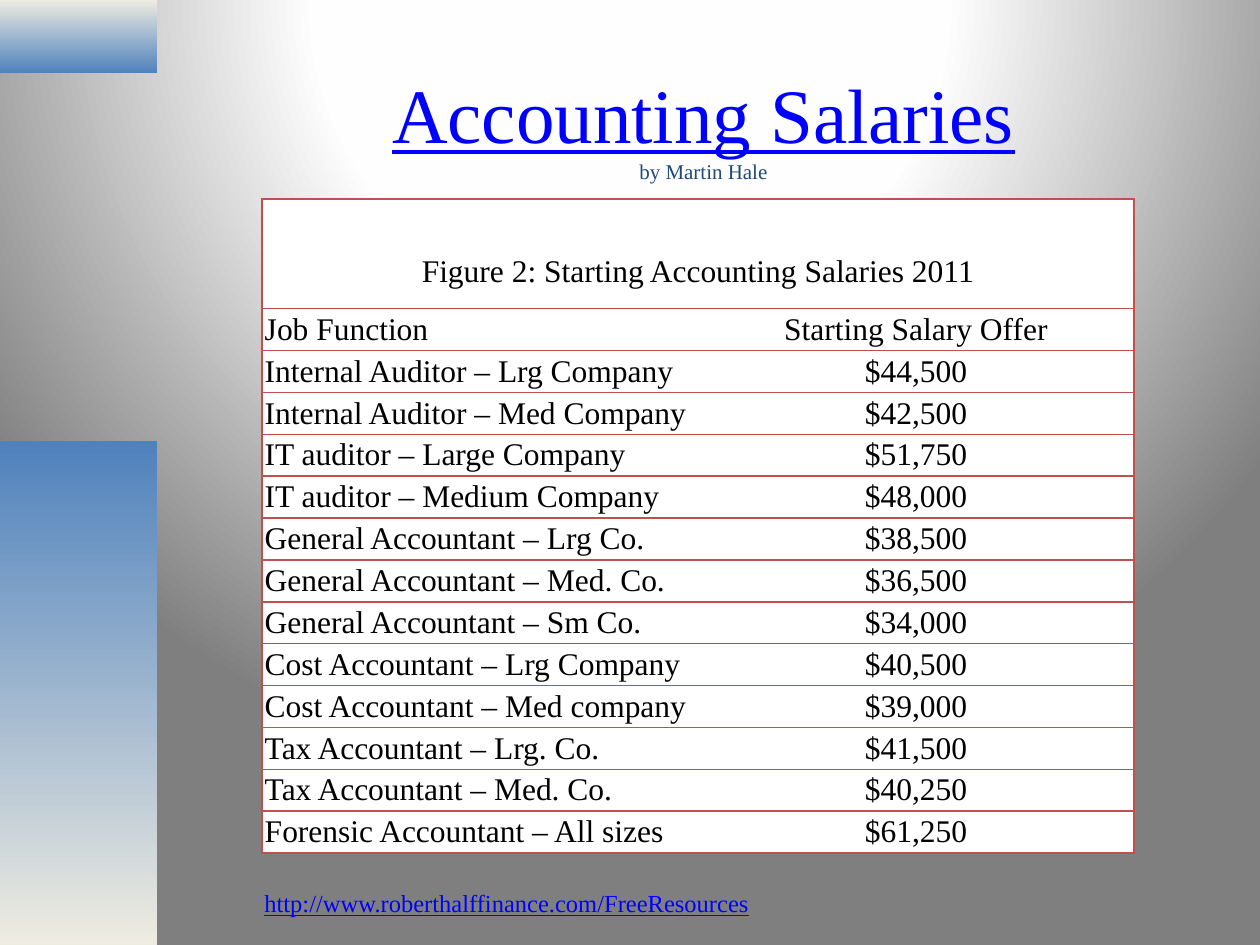
import pptx
import pptx.util
import pptx.oxml
import pptx.oxml.ns
from pptx.dml.color import RGBColor
from pptx.enum.shapes import MSO_SHAPE
from pptx.enum.text import MSO_ANCHOR, MSO_AUTO_SIZE, PP_ALIGN

Pt = pptx.util.Pt

# Content
TITLE = "Accounting Salaries"
BYLINE = "by Martin Hale"
HEAD = "Figure 2: Starting Accounting Salaries 2011"
LINK = "http://www.roberthalffinance.com/FreeResources"
ROWS = [
    ("Job Function", "Starting Salary Offer"),
    ("Internal Auditor – Lrg Company", "$44,500"),
    ("Internal Auditor – Med Company", "$42,500"),
    ("IT auditor – Large Company", "$51,750"),
    ("IT auditor – Medium Company", "$48,000"),
    ("General Accountant – Lrg Co.", "$38,500"),
    ("General Accountant – Med. Co.", "$36,500"),
    ("General Accountant – Sm Co.", "$34,000"),
    ("Cost Accountant – Lrg Company", "$40,500"),
    ("Cost Accountant – Med company", "$39,000"),
    ("Tax Accountant – Lrg. Co.", "$41,500"),
    ("Tax Accountant – Med. Co.", "$40,250"),
    ("Forensic Accountant – All sizes", "$61,250"),
]

# Style
FONT = "Times New Roman"
BLUE = RGBColor(0x00, 0x00, 0xFF)
NAVY = RGBColor(0x1F, 0x49, 0x7D)
STEEL = RGBColor(0x4F, 0x81, 0xBD)
CREAM = RGBColor(0xEE, 0xEC, 0xE1)
RED = RGBColor(0xC0, 0x50, 0x4D)
BLACK = RGBColor(0, 0, 0)
WHITE = RGBColor(0xFF, 0xFF, 0xFF)
PLAIN = "{2D5ABB26-0587-4C30-8999-92F81FD0307C}"  # table style without lines
NS = pptx.oxml.ns.nsdecls("a")

# Panels: top, height, upper colour, lower colour
PANELS = [(0, 42, CREAM, STEEL), (252, 288, STEEL, CREAM)]
SIDE_W = 90
COL_W, HEAD_H, ROW_H = 249.1, 62.6, 23.95
BACK = [(0, "FFFFFF"), (40, "FEFEFE"), (100, "7F7F7F")]


def style(font, size, color, line=False):
    font.name, font.size, font.underline = FONT, Pt(size), line
    font.color.rgb = color


def paint_back(slide):
    slide.background.fill.solid()
    old = slide.element.xpath(".//p:bgPr/a:solidFill")[0]
    stops = "".join(
        f'<a:gs pos="{pos * 1000}"><a:srgbClr val="{color}"/></a:gs>'
        for pos, color in BACK)
    new = pptx.oxml.parse_xml(
        f'<a:gradFill {NS} rotWithShape="1"><a:gsLst>{stops}</a:gsLst>'
        '<a:path path="circle"><a:fillToRect l="50000" t="-80000" '
        'r="50000" b="180000"/></a:path></a:gradFill>')
    old.getparent().replace(old, new)


def add_panel(slide, top, high, upper, lower):
    box = slide.shapes.add_shape(
        MSO_SHAPE.RECTANGLE, 0, Pt(top), Pt(SIDE_W), Pt(high))
    box.shadow.inherit = False
    box.line.fill.background()
    box.fill.gradient()
    box.fill.gradient_angle = 270
    for stop, color in zip(box.fill.gradient_stops, (upper, lower)):
        stop.color.rgb = color


def fill_cell(cell, text, sides, align, pad):
    cell.margin_left = cell.margin_right = Pt(pad)
    cell.margin_top = cell.margin_bottom = Pt(pad)
    cell.vertical_anchor = MSO_ANCHOR.MIDDLE
    props = cell._tc.get_or_add_tcPr()
    for side in sides:
        props.append(pptx.oxml.parse_xml(
            f'<a:ln{side} {NS} w="12700"><a:solidFill>'
            f'<a:srgbClr val="{RED}"/></a:solidFill></a:ln{side}>'))
    cell.fill.solid()
    cell.fill.fore_color.rgb = WHITE
    para = cell.text_frame.paragraphs[0]
    para.text, para.alignment = text, align
    style(para.font, 18, BLACK)


def add_grid(slide):
    count = len(ROWS) + 1
    frame = slide.shapes.add_table(
        count, 2, Pt(149.8), Pt(113.8), Pt(2 * COL_W),
        Pt(HEAD_H + ROW_H * len(ROWS)))
    table = frame.table
    table.horz_banding = table.first_row = False
    table._tbl.tblPr.xpath("a:tableStyleId")[0].text = PLAIN
    for col in table.columns:
        col.width = Pt(COL_W)
    for index, row in enumerate(table.rows):
        row.height = Pt(ROW_H if index else HEAD_H)

    # Heading across both columns, set one line low
    head = table.cell(0, 0)
    head.merge(table.cell(0, 1))
    fill_cell(head, HEAD, "LRTB", PP_ALIGN.CENTER, 0)
    head.margin_top = Pt(20.7)
    fill_cell(table.cell(0, 1), "", "RTB", PP_ALIGN.CENTER, 0)

    # Jobs and salaries
    for index, (job, pay) in enumerate(ROWS, 1):
        fill_cell(table.cell(index, 0), job, "LTB", PP_ALIGN.LEFT, 1.5)
        fill_cell(table.cell(index, 1), pay, "RTB", PP_ALIGN.CENTER, 1.5)


def main():
    deck = pptx.Presentation()
    deck.slide_width, deck.slide_height = Pt(720), Pt(540)
    slide = deck.slides.add_slide(deck.slide_layouts[5])
    paint_back(slide)
    for panel in PANELS:
        add_panel(slide, *panel)

    # Title and byline
    title = slide.shapes.title
    title.left, title.top = Pt(96), Pt(24)
    title.width, title.height = Pt(612), Pt(95)
    frame = title.text_frame
    frame.auto_size = MSO_AUTO_SIZE.NONE
    frame.vertical_anchor = MSO_ANCHOR.MIDDLE
    para = frame.paragraphs[0]
    para.alignment = PP_ALIGN.CENTER
    run = para.add_run()
    run.text = TITLE
    style(run.font, 44, BLUE, True)
    para.add_line_break()
    run = para.add_run()
    run.text = BYLINE
    style(run.font, 12, NAVY)

    add_grid(slide)

    # Web address
    box = slide.shapes.add_textbox(Pt(144), Pt(504), Pt(498), Pt(24.5))
    box.text_frame.word_wrap = True
    para = box.text_frame.paragraphs[0]
    para.text = LINK
    style(para.font, 14, BLUE, True)

    deck.save("out.pptx")


if __name__ == "__main__":
    main()
